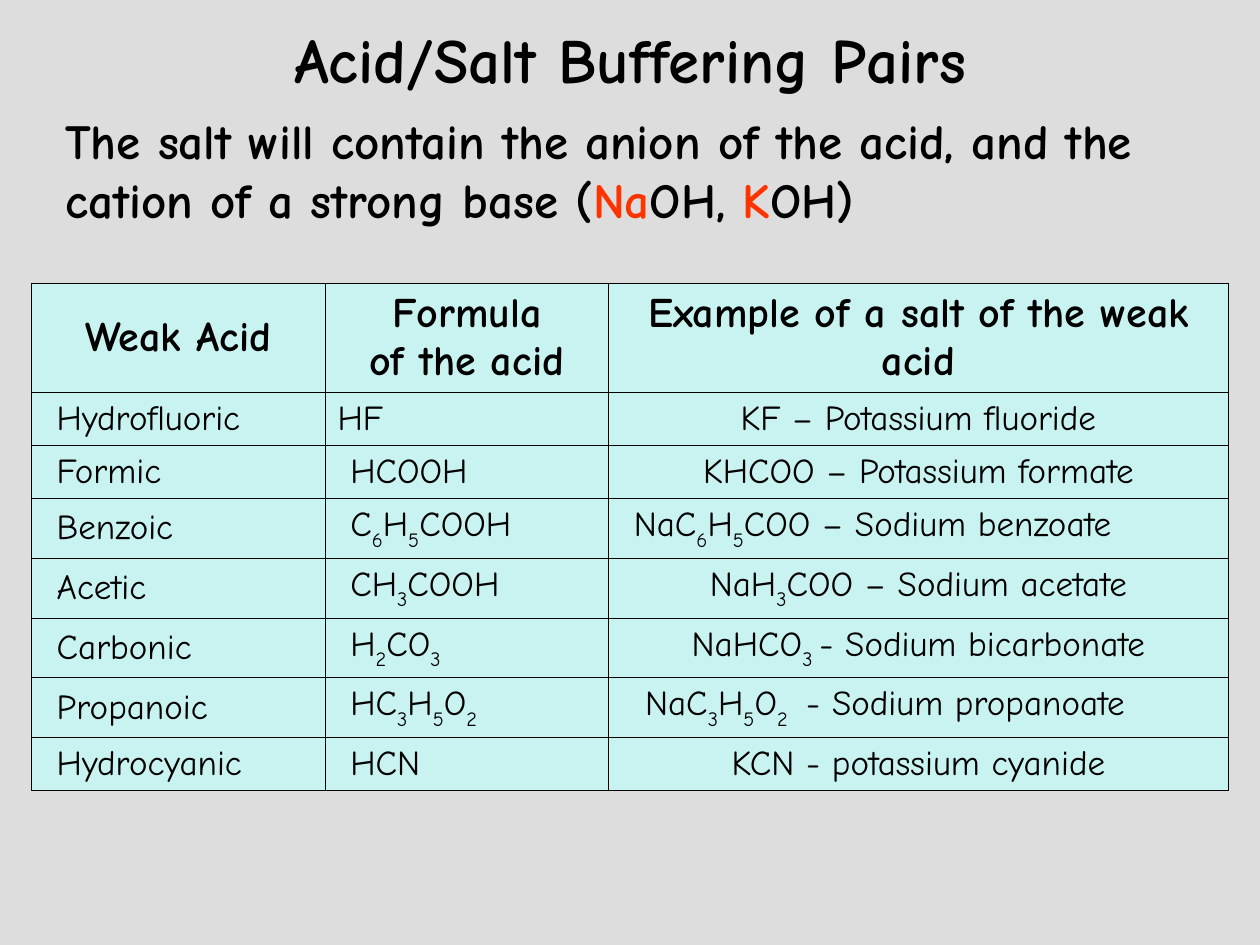
import pptx
import pptx.dml.color
import pptx.enum.text
import pptx.oxml
import pptx.oxml.ns
import pptx.util
from pptx.util import Inches

FONT = "Comic Neue"
BLACK = "000000"
RED = "FF3300"
CELL_FILL = "C9F3F0"
CENTER = pptx.enum.text.PP_ALIGN.CENTER
LEFT = pptx.enum.text.PP_ALIGN.LEFT
MIDDLE = pptx.enum.text.MSO_ANCHOR.MIDDLE

INTRO = ("The salt will contain the anion of the acid, and the cation of "
         "a strong base (|Na|OH, |K|OH)")
COLUMN_WIDTHS = [2.33, 2.25, 4.92]
HEADER_HEIGHT = 0.75
ROW_HEIGHT = 0.27
HEADERS = ["Weak Acid", "Formula\nof the acid", "Example of a salt of the weak acid"]
# Bars enclose subscripts. The last two values are the left margins of the
# formula and of the salt; a salt without a margin is centred.
ACIDS = [
    ("Hydrofluoric", "HF", "KF – Potassium fluoride", 0.1, None),
    ("Formic", "HCOOH", "KHCOO – Potassium formate", 0.2, None),
    ("Benzoic", "C|6|H|5|COOH", "NaC|6|H|5|COO – Sodium benzoate", 0.2, 0.2),
    ("Acetic", "CH|3|COOH", "NaH|3|COO – Sodium acetate", 0.2, None),
    ("Carbonic", "H|2|CO|3", "NaHCO|3 |- Sodium bicarbonate", 0.2, None),
    ("Propanoic", "HC|3|H|5|O|2", "NaC|3|H|5|O|2 | - Sodium propanoate", 0.2, 0.29),
    ("Hydrocyanic", "HCN", "KCN - potassium cyanide", 0.2, None),
]


def color(value):
    return pptx.dml.color.RGBColor.from_string(value)


def fill_solid(fill, value):
    fill.solid()
    fill.fore_color.rgb = color(value)


def write_marked(paragraph, text, size, bold, mark):
    """Write text as runs and call mark on each run enclosed in bars."""
    for index, part in enumerate(text.split("|")):
        if not part:
            continue
        run = paragraph.add_run()
        run.text = part
        run.font.name = FONT
        run.font.size = pptx.util.Pt(size)
        run.font.bold = bold
        run.font.color.rgb = color(BLACK)
        if index % 2:
            mark(run)


def make_red(run):
    run.font.color.rgb = color(RED)


def make_subscript(run):
    run.font._element.set("baseline", "-30000")


def add_title(slide, text):
    title = slide.shapes.title
    title.left, title.top = Inches(0.5), Inches(0.17)
    title.width, title.height = Inches(9), Inches(0.58)
    title.text_frame.vertical_anchor = MIDDLE
    paragraph = title.text_frame.paragraphs[0]
    paragraph.alignment = CENTER
    write_marked(paragraph, text, 36, True, make_red)


def add_intro(slide):
    box = slide.shapes.add_textbox(Inches(0.42), Inches(0.83), Inches(9.18), Inches(1.03))
    box.text_frame.word_wrap = True
    write_marked(box.text_frame.paragraphs[0], INTRO, 28, True, make_red)


def add_borders(cell):
    properties = cell._tc.get_or_add_tcPr()
    for side in ("lnL", "lnR", "lnT", "lnB"):
        properties.append(pptx.oxml.parse_xml(
            f'<a:{side} {pptx.oxml.ns.nsdecls("a")} w="9525"><a:solidFill>'
            f'<a:srgbClr val="{BLACK}"/></a:solidFill></a:{side}>'))


def write_cell(cell, text, size=20, bold=False, margin=None):
    """Fill a cell; text is centred unless a left margin is given."""
    add_borders(cell)
    fill_solid(cell.fill, CELL_FILL)
    cell.vertical_anchor = MIDDLE
    if margin is not None:
        cell.margin_left = Inches(margin)
    for index, line in enumerate(text.split("\n")):
        frame = cell.text_frame
        paragraph = frame.add_paragraph() if index else frame.paragraphs[0]
        paragraph.alignment = CENTER if margin is None else LEFT
        write_marked(paragraph, line, size, bold, make_subscript)


def add_acid_table(slide):
    height = HEADER_HEIGHT + ROW_HEIGHT * len(ACIDS)
    table = slide.shapes.add_table(
        len(ACIDS) + 1, len(HEADERS), Inches(0.25), Inches(2.25),
        Inches(sum(COLUMN_WIDTHS)), Inches(height)).table
    for column, width in zip(table.columns, COLUMN_WIDTHS):
        column.width = Inches(width)
    for index, row in enumerate(table.rows):
        row.height = Inches(ROW_HEIGHT if index else HEADER_HEIGHT)
    for index, header in enumerate(HEADERS):
        write_cell(table.cell(0, index), header, 24, True)
    for row, (acid, formula, salt, formula_margin, salt_margin) in enumerate(ACIDS, 1):
        write_cell(table.cell(row, 0), acid, margin=0.2)
        write_cell(table.cell(row, 1), formula, margin=formula_margin)
        write_cell(table.cell(row, 2), salt, margin=salt_margin)


def main():
    presentation = pptx.Presentation()
    presentation.slide_width = Inches(10)
    presentation.slide_height = Inches(7.5)
    slide = presentation.slides.add_slide(presentation.slide_layouts[5])
    fill_solid(slide.background.fill, "DDDDDD")
    add_title(slide, "Acid/Salt Buffering Pairs")
    add_acid_table(slide)
    add_intro(slide)
    presentation.save("out.pptx")


if __name__ == "__main__":
    main()
